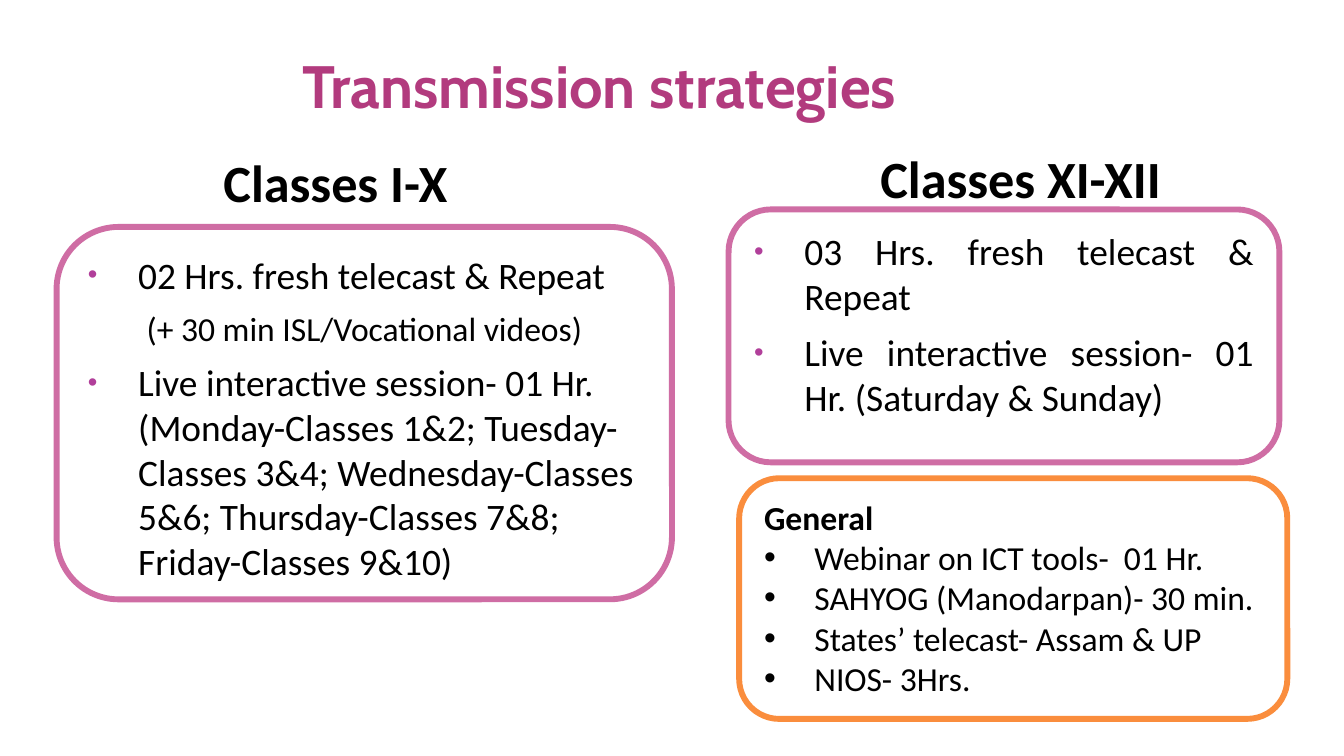
from lxml import etree
from pptx import Presentation
from pptx.dml.color import RGBColor
from pptx.enum import shapes, text
from pptx.oxml import ns
from pptx.util import Cm, Pt

COLORS = {"title": "B23B7E", "ink": "000000", "paper": "FFFFFF",
          "pink": "CF6DA4", "orange": "FA8D3D", "bullet": "B13F9A"}
HANG = 0.95
LEFT, CENTER, JUSTIFY = text.PP_ALIGN.LEFT, text.PP_ALIGN.CENTER, text.PP_ALIGN.JUSTIFY
MIDDLE, BOTTOM = text.MSO_ANCHOR.MIDDLE, text.MSO_ANCHOR.BOTTOM

HEADINGS = [
    ("Transmission strategies", (1.27, 0.58, 20.12, 1.7), "Cabin", 32, "title", BOTTOM, 0),
    ("Classes I-X", (3.38, 2.92, 5.92, 1.02), "Calibri", 28, "ink", MIDDLE, 0.13),
    ("Classes XI-XII", (15.67, 2.69, 7.24, 1.32), "Calibri", 28, "ink", MIDDLE, 0.13),
]

CARDS = [
    {"box": (1.07, 4.29, 11.63, 7.04), "line": "pink", "bullet": "bullet",
     "align": LEFT, "gap": 6, "anchor": text.MSO_ANCHOR.TOP,
     "items": [
         ("bullet", "02 Hrs. fresh telecast & Repeat", 20),
         ("note", "(+ 30 min ISL/Vocational videos)", 18),
         ("bullet", "Live interactive session- 01 Hr. (Monday-Classes 1&2; "
                    "Tuesday-Classes 3&4; Wednesday-Classes 5&6; "
                    "Thursday-Classes 7&8; Friday-Classes 9&10)", 20)]},
    {"box": (13.77, 3.96, 10.41, 4.78), "line": "pink", "bullet": "bullet",
     "align": JUSTIFY, "gap": 6, "anchor": text.MSO_ANCHOR.TOP,
     "items": [
         ("bullet", "03 Hrs. fresh telecast & Repeat", 20),
         ("bullet", "Live interactive session- 01 Hr. (Saturday & Sunday)", 20)]},
    {"box": (13.97, 9.04, 10.36, 4.55), "line": "orange", "bullet": None,
     "align": LEFT, "gap": 0, "anchor": text.MSO_ANCHOR.TOP,
     "items": [
         ("head", "General", 18),
         ("bullet", "Webinar on ICT tools-  01 Hr.", 18),
         ("bullet", "SAHYOG (Manodarpan)- 30 min.", 18),
         ("bullet", "States’ telecast- Assam & UP", 18),
         ("bullet", "NIOS- 3Hrs.", 18)]},
]


def rgb(name):
    return RGBColor.from_string(COLORS[name])


def add_run(p, words, font, size, color, bold=False):
    r = p.add_run()
    r.text = words
    r.font.name, r.font.size, r.font.bold = font, Pt(size), bold
    r.font.color.rgb = rgb(color)


def indent(p, left, first=0):
    pPr = p._p.get_or_add_pPr()
    pPr.set("marL", str(Cm(left)))
    pPr.set("indent", str(Cm(first)))
    return pPr


def add_bullet(p, color):
    pPr = indent(p, HANG, -HANG)
    if color:
        clr = etree.SubElement(pPr, ns.qn("a:buClr"))
        etree.SubElement(clr, ns.qn("a:srgbClr"), val=COLORS[color])
        etree.SubElement(pPr, ns.qn("a:buSzPct"), val="73000")
    etree.SubElement(pPr, ns.qn("a:buFont"), typeface="Arial")
    etree.SubElement(pPr, ns.qn("a:buChar"), char="•")


def add_heading(s, words, box, font, size, color, anchor, inset):
    tf = s.shapes.add_textbox(*map(Cm, box)).text_frame
    tf.word_wrap, tf.vertical_anchor = True, anchor
    tf.margin_top = tf.margin_bottom = Cm(inset)
    p = tf.paragraphs[0]
    p.alignment = CENTER
    add_run(p, words, font, size, color, True)


def add_card(s, card):
    sp = s.shapes.add_shape(shapes.MSO_SHAPE.ROUNDED_RECTANGLE, *map(Cm, card["box"]))
    sp.shadow.inherit = False
    sp.fill.solid()
    sp.fill.fore_color.rgb = rgb("paper")
    sp.line.color.rgb = rgb(card["line"])
    sp.line.width = Pt(3.15)
    tf = sp.text_frame
    tf.word_wrap, tf.vertical_anchor = True, card["anchor"]
    for i, (role, words, size) in enumerate(card["items"]):
        p = tf.add_paragraph() if i else tf.paragraphs[0]
        p.alignment = card["align"]
        if i:
            p.space_before = Pt(card["gap"])
        if role == "bullet":
            add_bullet(p, card["bullet"])
        elif role == "note":
            indent(p, 1.11)
        add_run(p, words, "Calibri", size, "ink", role == "head")


def main():
    prs = Presentation()
    prs.slide_width, prs.slide_height = Cm(25.4), Cm(14.29)
    s = prs.slides.add_slide(prs.slide_layouts[6])
    for heading in HEADINGS:
        add_heading(s, *heading)
    for card in CARDS:
        add_card(s, card)
    prs.save("out.pptx")


if __name__ == "__main__":
    main()
